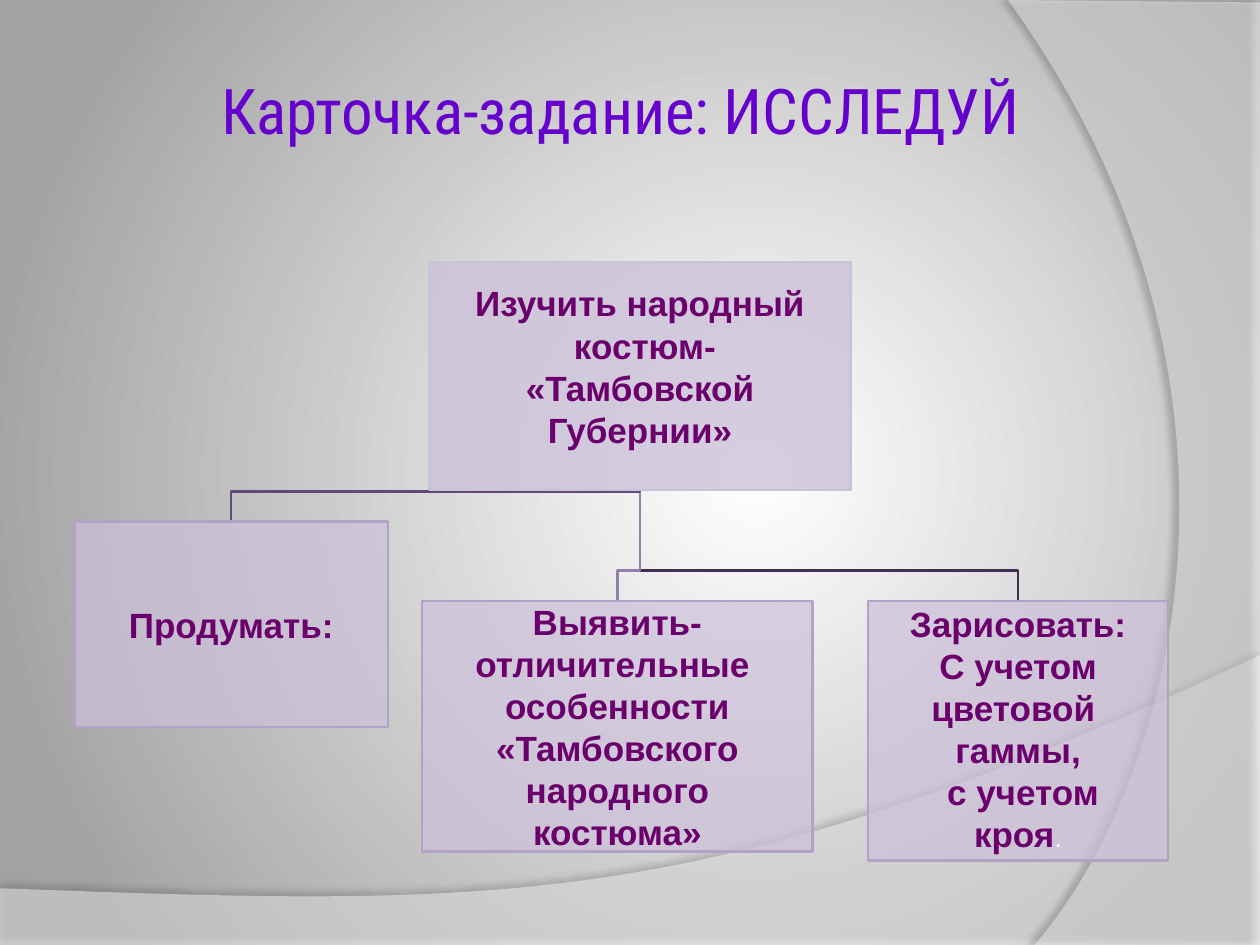
import dataclasses
from typing import Iterable

import pptx
import pptx.dml.color
import pptx.enum.shapes
import pptx.enum.text
import pptx.oxml
import pptx.oxml.ns
import pptx.util

RGBColor = pptx.dml.color.RGBColor
qn = pptx.oxml.ns.qn
Point = tuple[float, float]

WHITE = RGBColor(0xFF, 0xFF, 0xFF)
GREY = RGBColor(0xA2, 0xA2, 0xA2)
LILAC = RGBColor(0xCC, 0xC1, 0xDA)
LILAC_EDGE = RGBColor(0xB3, 0xA2, 0xC7)
PLUM = RGBColor(0x6B, 0x00, 0x6C)
VIOLET = RGBColor(0x66, 0x00, 0xCC)
DARK_LINK = RGBColor(0x40, 0x31, 0x52)
LIGHT_LINK = RGBColor(0x94, 0x80, 0xAE)
MID_LINK = RGBColor(0x60, 0x4A, 0x7B)

SLIDE_WIDTH = pptx.util.Inches(10)
SLIDE_HEIGHT = pptx.util.Inches(7.5)
COLUMNS, ROWS = 100, 75
BAR_GAP = 2.4  # rows between a link's crossbar and the task below it
CURVE_STEPS = 48

TASK_FONT = {"name": "Arial", "size": pptx.util.Pt(20), "bold": True}
FULL_STOP_FONT = {"name": "Arial", "size": pptx.util.Pt(16), "bold": False}
TITLE_FONT = {"name": "Roboto Condensed", "size": pptx.util.Pt(36), "bold": False}


@dataclasses.dataclass(frozen=True)
class Task:
    left: float
    top: float
    width: float
    height: float
    lines: tuple[str, ...]
    opacity: int = 70
    edge: RGBColor = LILAC_EDGE
    link: RGBColor | None = None
    lift: float = 0.1  # bottom inset, in rows
    full_stop: str = ""

    @property
    def centre(self) -> float:
        return self.left + self.width / 2


@dataclasses.dataclass(frozen=True)
class Shadow:
    opacity: int
    blur: float
    distance: float
    angle: int


GOAL = Task(34.1, 20.8, 33.4, 18.1,
            ("Изучить народный", " костюм-", "«Тамбовской", "Губернии»"),
            opacity=80, edge=LILAC, lift=1.7)
STEPS = (
    Task(5.9, 41.4, 24.9, 16.3, ("Продумать:",), link=MID_LINK),
    Task(33.5, 47.7, 31, 19.9,
         ("Выявить-", "отличительные ", "особенности", "«Тамбовского",
          "народного", "костюма»"), link=LIGHT_LINK),
    Task(68.9, 47.7, 23.8, 20.6,
         ("Зарисовать:", "С учетом цветовой ", "гаммы,", " с учетом", "кроя"),
         link=DARK_LINK, lift=0.5, full_stop="."),
)


def col(count: float) -> int:
    return round(SLIDE_WIDTH * count / COLUMNS)


def row(count: float) -> int:
    return round(SLIDE_HEIGHT * count / ROWS)


def bezier(start: Point, bend1: Point, bend2: Point, end: Point) -> list[Point]:
    """Points along a cubic curve, both ends included."""
    points = []
    for step in range(CURVE_STEPS + 1):
        t = step / CURVE_STEPS
        weights = ((1 - t) ** 3, 3 * t * (1 - t) ** 2, 3 * t * t * (1 - t), t ** 3)
        points.append(tuple(
            sum(w * p[axis] for w, p in zip(weights, (start, bend1, bend2, end)))
            for axis in (0, 1)))
    return points


def set_format(target, values: dict) -> None:
    for name, value in values.items():
        setattr(target, name, value)


def set_fill(shape, color: RGBColor, opacity: int) -> None:
    shape.fill.solid()
    shape.fill.fore_color.rgb = color
    tint = shape.element.spPr.find(qn("a:solidFill")).find(qn("a:srgbClr"))
    tint.append(pptx.oxml.parse_xml(
        f'<a:alpha {pptx.oxml.ns.nsdecls("a")} val="{opacity * 1000}"/>'))


def draw_outline(slide, points: Iterable[Point], closed: bool):
    start, *rest = [(col(x), row(y)) for x, y in points]
    builder = slide.shapes.build_freeform(*start, scale=1.0)
    builder.add_line_segments(rest, close=closed)
    shape = builder.convert_to_shape()
    shape.shadow.inherit = False
    return shape


def draw_sweep(slide, points: list[Point], opacity: int, shadow: Shadow) -> None:
    sweep = draw_outline(slide, points, closed=True)
    set_fill(sweep, WHITE, opacity)
    sweep.line.fill.background()
    sweep.element.spPr.find(qn("a:effectLst")).append(pptx.oxml.parse_xml(
        f'<a:outerShdw {pptx.oxml.ns.nsdecls("a")} blurRad="{pptx.util.Pt(shadow.blur)}"'
        f' dist="{pptx.util.Pt(shadow.distance)}" dir="{shadow.angle * 60000}"'
        f' algn="ctr" rotWithShape="0"><a:srgbClr val="000000">'
        f'<a:alpha val="{shadow.opacity * 1000}"/></a:srgbClr></a:outerShdw>'))


def draw_link(slide, parent: Task, child: Task) -> None:
    bar = child.top - BAR_GAP
    link = draw_outline(slide, (
        (parent.centre, parent.top + parent.height), (parent.centre, bar),
        (child.centre, bar), (child.centre, child.top)), closed=False)
    link.fill.background()
    set_format(link.line, {"width": pptx.util.Pt(1.5)})
    link.line.color.rgb = child.link


def add_run(paragraph, text: str, font: dict, color: RGBColor) -> None:
    run = paragraph.add_run()
    run.text = text
    set_format(run.font, font)
    run.font.color.rgb = color


def draw_task(slide, task: Task) -> None:
    box = slide.shapes.add_shape(
        pptx.enum.shapes.MSO_SHAPE.RECTANGLE,
        col(task.left), row(task.top), col(task.width), row(task.height))
    box.shadow.inherit = False
    set_fill(box, LILAC, task.opacity)
    box.line.color.rgb = task.edge
    box.line.width = pptx.util.Pt(1.5)
    frame = box.text_frame
    set_format(frame, {
        "word_wrap": True, "vertical_anchor": pptx.enum.text.MSO_ANCHOR.MIDDLE,
        "margin_left": col(0.1), "margin_right": col(0.1),
        "margin_top": row(0.1), "margin_bottom": row(task.lift)})
    for index, line in enumerate(task.lines):
        paragraph = frame.add_paragraph() if index else frame.paragraphs[0]
        paragraph.alignment = pptx.enum.text.PP_ALIGN.CENTER
        add_run(paragraph, line, TASK_FONT, PLUM)
    if task.full_stop:
        add_run(paragraph, task.full_stop, FULL_STOP_FONT, WHITE)


def draw_background(slide) -> None:
    """White glow right of the centre, fading to grey."""
    fill = slide.background.fill
    fill.gradient()
    for stop, color in zip(fill.gradient_stops, (WHITE, GREY)):
        stop.color.rgb = color
    gradient = next(slide.element.iter(qn("a:gradFill")))
    gradient.replace(gradient.find(qn("a:lin")), pptx.oxml.parse_xml(
        f'<a:path {pptx.oxml.ns.nsdecls("a")} path="circle">'
        '<a:fillToRect l="60000" t="50000" r="40000" b="50000"/></a:path>'))


def draw_title(slide) -> None:
    title = slide.shapes.add_textbox(col(8.3), row(5.2), col(81.9), row(10.2))
    title.text_frame.word_wrap = False
    paragraph = title.text_frame.paragraphs[0]
    paragraph.alignment = pptx.enum.text.PP_ALIGN.CENTER
    add_run(paragraph, "Карточка-задание: ИССЛЕДУЙ", TITLE_FONT, VIOLET)


def main() -> None:
    deck = pptx.Presentation()
    deck.slide_width, deck.slide_height = SLIDE_WIDTH, SLIDE_HEIGHT
    slide = deck.slides.add_slide(deck.slide_layouts[6])
    draw_background(slide)
    draw_sweep(slide, [(0, 75.1), (100, 75.1),
                       *bezier((100, 52), (55.9, 72.9), (39.1, 71.9), (0, 70.5))],
               45, Shadow(35, 4, 3.5, 270))
    draw_sweep(slide, [(100, 0.2), (100, 75),
                       *bezier((82.1, 75), (93.5, 61.9), (101.8, 30), (80, 0))],
               40, Shadow(45, 4, 4, 180))
    for step in reversed(STEPS):
        draw_link(slide, GOAL, step)
    for task in (GOAL, *STEPS):
        draw_task(slide, task)
    draw_title(slide)
    deck.save("out.pptx")


if __name__ == "__main__":
    main()
